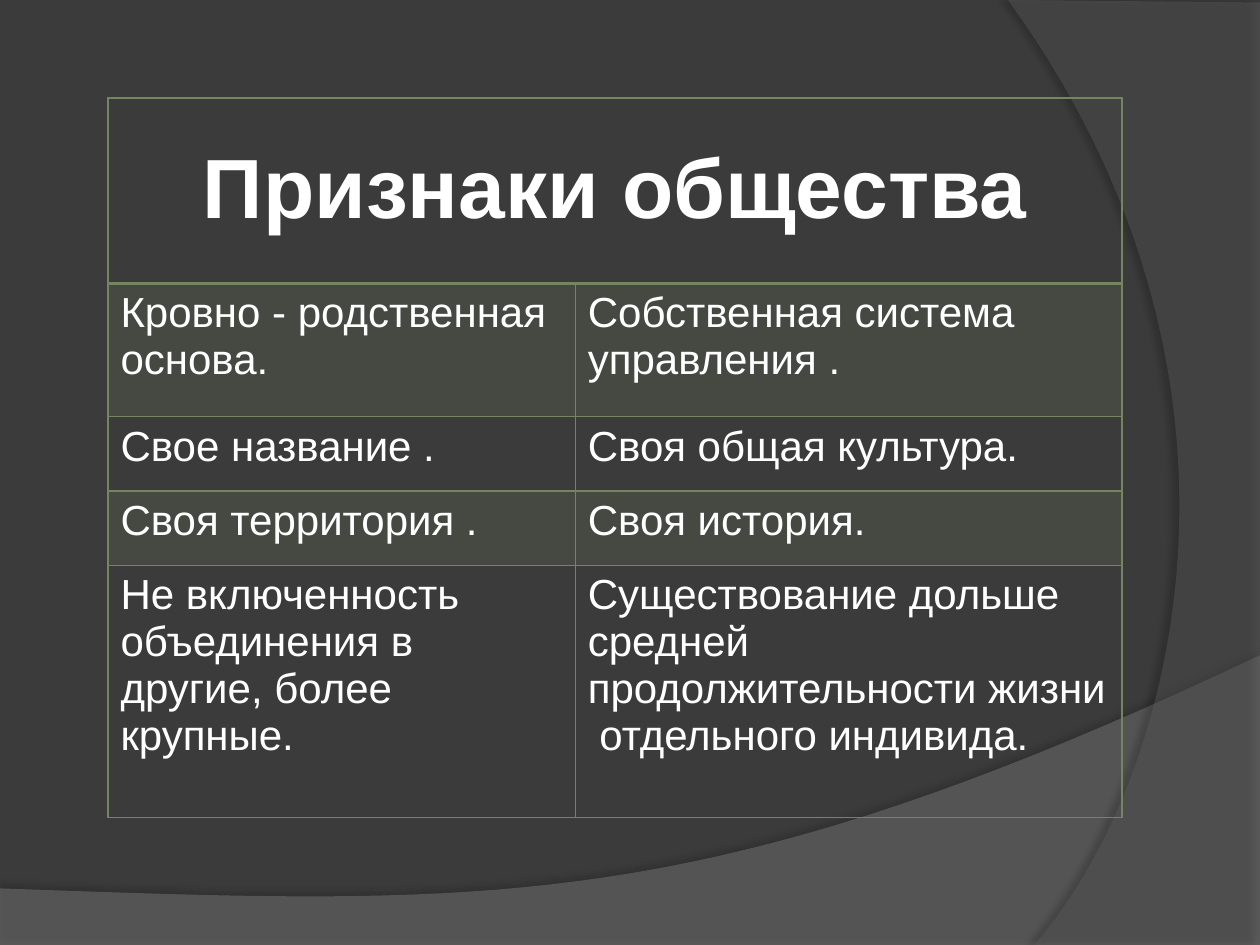
"""Build a slide with a table of the signs of a society."""
from lxml.etree import SubElement
from pptx import Presentation
from pptx.dml.color import RGBColor
from pptx.enum.text import MSO_ANCHOR, PP_ALIGN
from pptx.oxml.ns import qn
from pptx.util import Cm, Pt

TITLE = "Признаки общества"
ROWS = [
    ("Кровно - родственная основа.", "Собственная система управления ."),
    ("Свое название .", "Своя общая культура."),
    ("Своя территория .", "Своя история."),
    ("Не включенность объединения в другие, более крупные.",
     "Существование дольше средней продолжительности жизни  отдельного индивида."),
]
WIDTHS = [9.42, 11.02]
HEIGHTS = [3.73, 2.69, 1.5, 1.5, 5.08]
LEFT, TOP = 2.18, 1.98
GREEN = "748560"
WAVES = [
    dict(line=[(0, 17.91), (0, 19.08), (25.4, 19.08), (25.4, 13.21)],
         curve=[(14.2, 18.52), (9.93, 18.26), (0, 17.91)],
         color="7F7F7F", alpha=45, shade=35, dist=3.5, turn=270),
    dict(line=[(25.4, 0.05), (25.4, 19.05), (20.85, 19.05)],
         curve=[(23.75, 15.72), (25.86, 7.62), (20.32, 0)],
         color="5E5E5E", alpha=40, shade=45, dist=4, turn=180),
]
STEPS = 40


def paint(fill, color, alpha=100):
    fill.solid()
    fill.fore_color.rgb = RGBColor.from_string(color)
    if alpha < 100:
        tint = fill._xPr.find(qn("a:solidFill"))[0]
        SubElement(tint, qn("a:alpha"), val=str(alpha * 1000))


def bend(start, one, two, end):
    for step in range(1, STEPS + 1):
        t = step / STEPS
        u = 1 - t
        yield tuple(u**3 * a + 3 * u * u * t * b + 3 * u * t * t * c + t**3 * d
                    for a, b, c, d in zip(start, one, two, end))


def draw_wave(slide, line, curve, color, alpha, shade, dist, turn):
    points = [(Cm(x), Cm(y)) for x, y in [*line, *bend(line[-1], *curve)]]
    pen = slide.shapes.build_freeform(*points[0])
    pen.add_line_segments(points[1:])
    wave = pen.convert_to_shape()
    paint(wave.fill, color, alpha)
    wave.line.fill.background()
    wave.shadow.inherit = False
    glow = SubElement(wave._element.spPr.find(qn("a:effectLst")), qn("a:outerShdw"),
                      blurRad=str(Pt(4)), dist=str(Pt(dist)),
                      dir=str(turn * 60000), algn="ctr", rotWithShape="0")
    SubElement(SubElement(glow, qn("a:srgbClr"), val="000000"),
               qn("a:alpha"), val=str(shade * 1000))


def edge(cell, sides):
    for side, width in sides.items():
        line = SubElement(cell._tc.get_or_add_tcPr(), qn("a:ln" + side), w=str(Pt(width)))
        SubElement(SubElement(line, qn("a:solidFill")), qn("a:srgbClr"), val=GREEN)


def write(cell, text, size=24, bold=False, align=PP_ALIGN.LEFT, top=0.13):
    cell.margin_left = cell.margin_right = Cm(0.25)
    cell.margin_top, cell.margin_bottom = Cm(top), Cm(0.13)
    cell.vertical_anchor = MSO_ANCHOR.TOP
    part = cell.text_frame.paragraphs[0]
    part.alignment = align
    run = part.add_run()
    run.text = text
    run.font.name, run.font.size, run.font.bold = "Arial", Pt(size), bold
    run.font.color.rgb = RGBColor.from_string("FFFFFF")


def fill_table(slide):
    table = slide.shapes.add_table(len(HEIGHTS), len(WIDTHS), Cm(LEFT), Cm(TOP),
                                   Cm(sum(WIDTHS)), Cm(sum(HEIGHTS))).table
    table.first_row = table.horz_banding = False
    for col, width in zip(table.columns, WIDTHS):
        col.width = Cm(width)
    for row, height in zip(table.rows, HEIGHTS):
        row.height = Cm(height)
    head = table.cell(0, 0)
    head.merge(table.cell(0, 1))
    write(head, TITLE, size=48, bold=True, align=PP_ALIGN.CENTER, top=0.89)
    for r, texts in enumerate(ROWS, 1):
        for c, text in enumerate(texts):
            write(table.cell(r, c), text)
    for r, row in enumerate(table.rows):
        for cell in row.cells:
            edge(cell, dict(L=1, R=1, T=2 if r == 1 else 1, B=2 if r == 0 else 1))
            if r % 2:
                paint(cell.fill, GREEN, 20)
            else:
                cell.fill.background()


def main():
    deck = Presentation()
    deck.slide_width, deck.slide_height = Cm(25.4), Cm(19.05)
    slide = deck.slides.add_slide(deck.slide_layouts[6])
    paint(slide.background.fill, "3B3B3B")
    for wave in WAVES:
        draw_wave(slide, **wave)
    fill_table(slide)
    deck.save("out.pptx")


if __name__ == "__main__":
    main()
